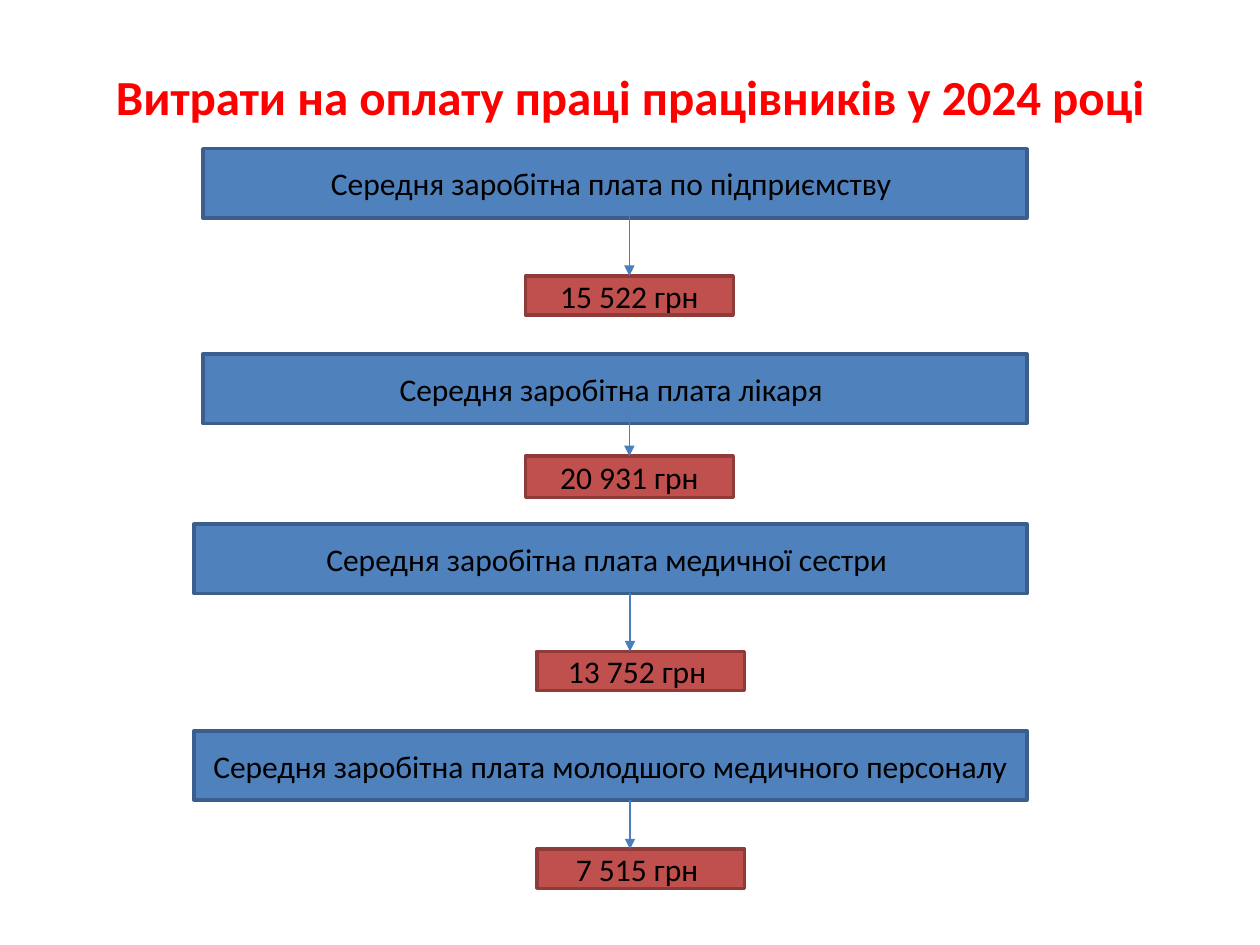
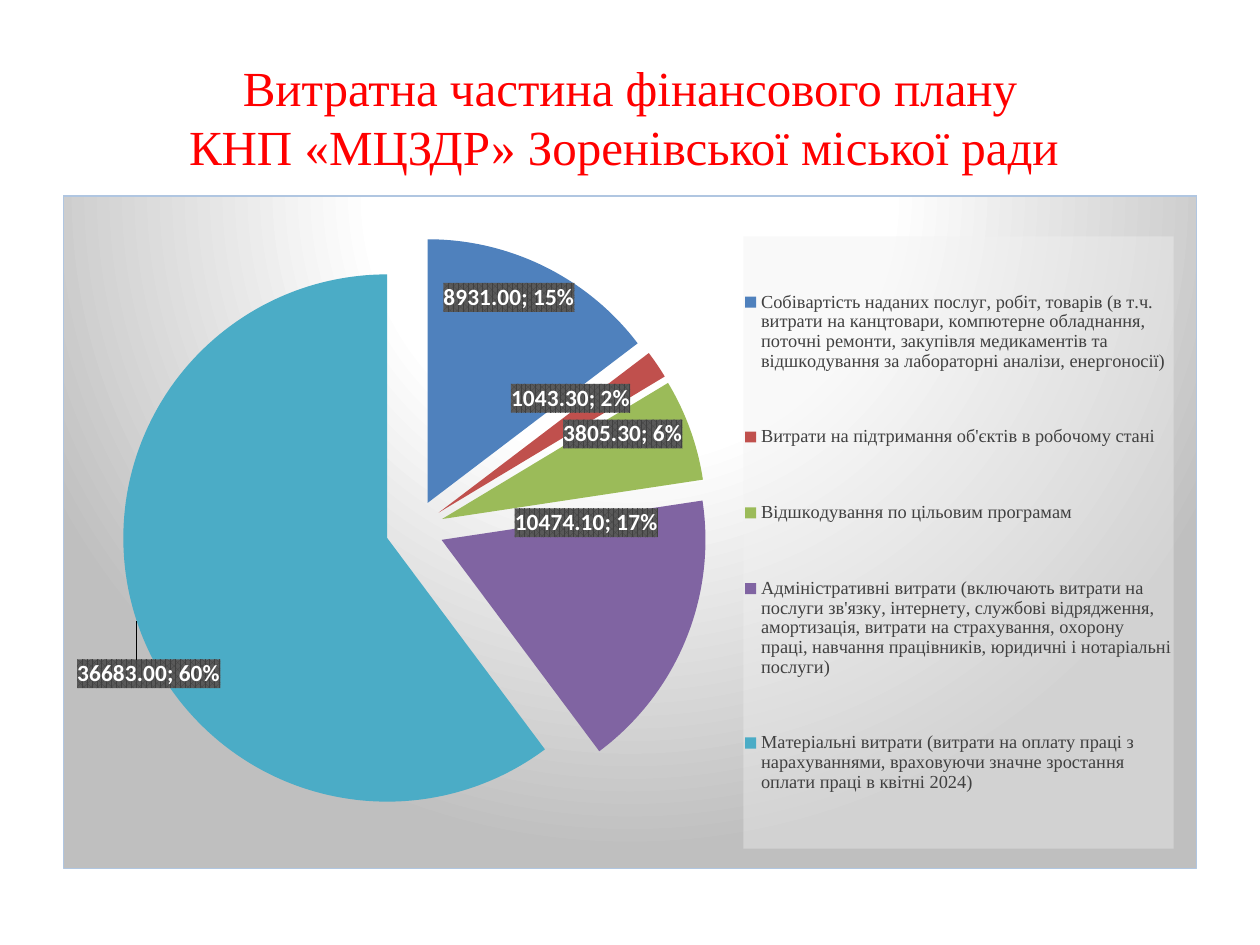
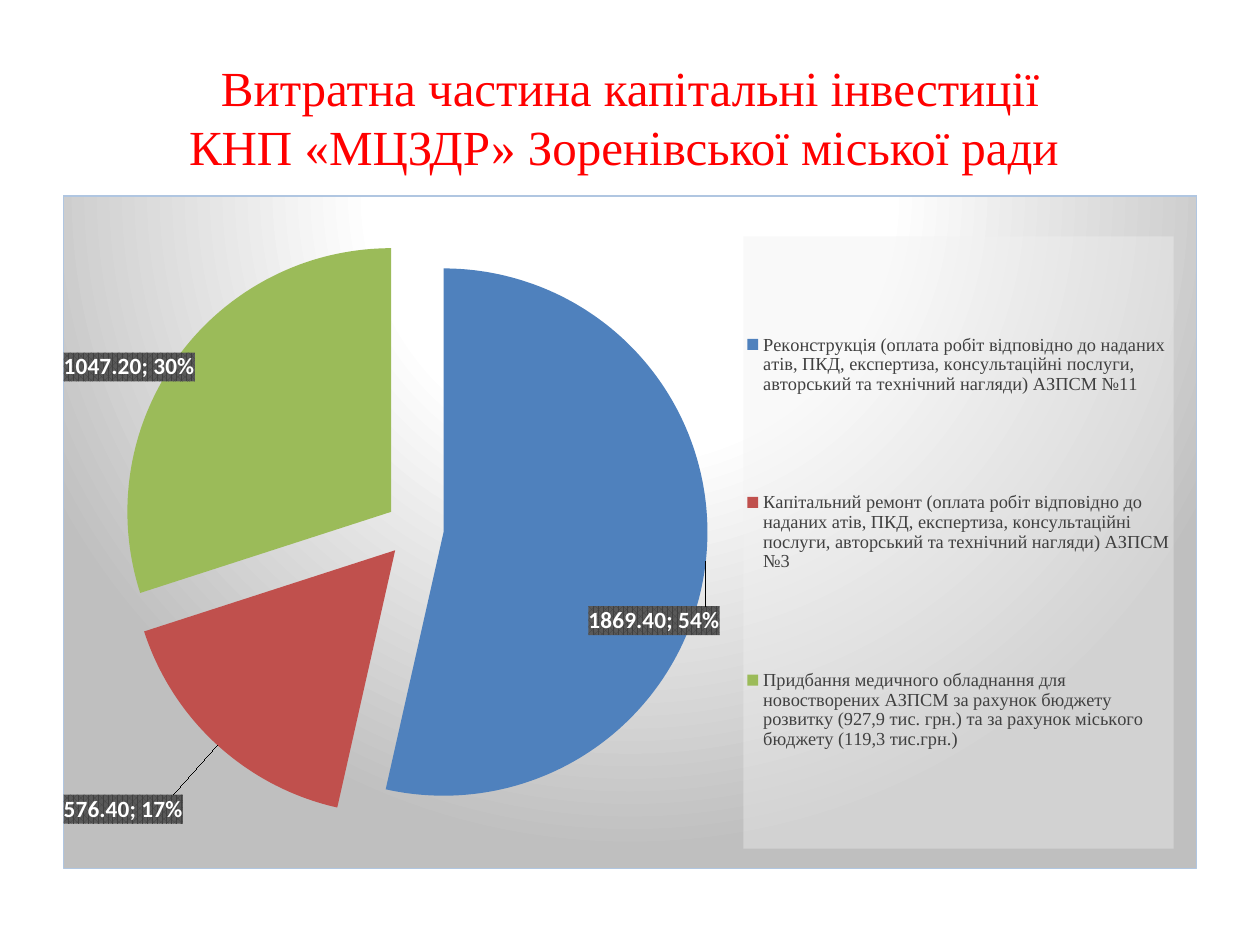
from pptx import Presentation
from pptx.chart.data import CategoryChartData
from pptx.dml.color import RGBColor
from pptx.enum.chart import XL_CHART_TYPE, XL_LEGEND_POSITION
from pptx.enum.shapes import MSO_CONNECTOR, MSO_SHAPE
from pptx.enum.text import MSO_ANCHOR, PP_ALIGN
from pptx.oxml import parse_xml
from pptx.oxml.ns import qn
from pptx.util import Inches, Pt

PROCESS = MSO_SHAPE.FLOWCHART_PROCESS
STRAIGHT = MSO_CONNECTOR.STRAIGHT
PIE = XL_CHART_TYPE.PIE
RIGHT = XL_LEGEND_POSITION.RIGHT
MIDDLE = MSO_ANCHOR.MIDDLE
CENTER = PP_ALIGN.CENTER

RED = RGBColor(0xFF, 0x00, 0x00)
BLACK = RGBColor(0x00, 0x00, 0x00)
GREY = RGBColor(0x40, 0x40, 0x40)
BLUE = RGBColor(0x4F, 0x81, 0xBD)
BLUE_EDGE = RGBColor(0x3A, 0x5F, 0x8C)
BRICK = RGBColor(0xC0, 0x50, 0x4D)
BRICK_EDGE = RGBColor(0x8E, 0x3B, 0x39)
ARROW = RGBColor(0x4B, 0x7E, 0xBC)
GREEN = RGBColor(0x9B, 0xBB, 0x59)
PURPLE = RGBColor(0x80, 0x64, 0xA2)
TEAL = RGBColor(0x4B, 0xAC, 0xC6)
SLICE_COLORS = [BLUE, BRICK, GREEN, PURPLE, TEAL]

SALARY_TITLE = "Витрати на оплату праці працівників у 2024 році"
ENTERPRISE = "КНП «МЦЗДР» Зоренівської міської ради "
SALARY_TITLE_FONT = {"name": "Calibri", "size": Pt(28), "bold": True}
CHART_TITLE_FONT = {"name": "Times New Roman", "size": Pt(28)}
BOX_FONT = {"name": "Calibri", "size": Pt(18)}
LEGEND_FONT = {"name": "Times New Roman", "size": Pt(10.5)}

# Group, its left and top; amount, its left, top and height; arrow start
SALARIES = [
    ("Середня заробітна плата по підприємству ", 1.61, 1.18,
     "15 522 грн", 4.17, 2.19, 0.31, 1.71),
    ("Середня заробітна плата лікаря ", 1.61, 2.81,
     "20 931 грн", 4.17, 3.62, 0.33, 3.2),
    ("Середня заробітна плата медичної сестри ", 1.54, 4.16,
     "13 752 грн ", 4.26, 5.17, 0.31, 4.71),
    ("Середня заробітна плата молодшого медичного персоналу", 1.54, 5.8,
     "7 515 грн ", 4.26, 6.74, 0.31, 6.35),
]
GROUP_RIGHT, GROUP_HEIGHT, AMOUNT_WIDTH, ARROW_X = 8.15, 0.55, 1.65, 5

# Category, value, shift of its label as a share of the chart
CHARTS = [
    ("Витратна частина фінансового плану", [
        ("Собівартість наданих послуг, робіт, товарів (в т.ч. витрати на "
         "канцтовари, компютерне обладнання, поточні ремонти, закупівля "
         "медикаментів та відшкодування за лабораторні аналізи, енергоносії)",
         8931, (0.02, -0.13)),
        ("Витрати на підтримання об'єктів в робочому стані ", 1043.3, (0.02, -0.06)),
        ("Відшкодування по цільовим програмам", 3805.3, (0.05, -0.06)),
        ("Адміністративні витрати (включають витрати на послуги зв'язку, "
         "інтернету, службові відрядження, амортизація, витрати на страхування, "
         "охорону праці, навчання працівників, юридичні і нотаріальні послуги)",
         10474.1, (0.02, -0.1)),
        ("Матеріальні витрати (витрати на оплату праці з нарахуваннями, "
         "враховуючи значне зростання оплати праці в квітні 2024)",
         36683, (-0.1, 0.14)),
    ]),
    ("Витратна частина капітальні інвестиції", [
        ("Реконструкція (оплата робіт відповідно до наданих атів, ПКД, експертиза, "
         "консультаційні послуги, авторський та технічний нагляди) АЗПСМ №11",
         1869.4, (0.07, 0.11)),
        ("Капітальний ремонт (оплата робіт відповідно до наданих атів, ПКД, "
         "експертиза, консультаційні послуги, авторський та технічний нагляди) "
         "АЗПСМ №3", 576.4, (-0.17, 0.24)),
        ("Придбання медичного обладнання для новостворених АЗПСМ за рахунок "
         "бюджету розвитку (927,9 тис. грн.) та за рахунок міського бюджету "
         "(119,3 тис.грн.)", 1047.2, (-0.14, -0.1)),
    ]),
]
EXPLOSION = 11
PLOT_AREA = (0.02, 0.06, 0.58, 0.87)
LEGEND_AREA = (0.6, 0.06, 0.38, 0.91)

NAMESPACES = (
    'xmlns:c="http://schemas.openxmlformats.org/drawingml/2006/chart" '
    'xmlns:a="http://schemas.openxmlformats.org/drawingml/2006/main"'
)
CHART_FILL = """
<a:gradFill><a:gsLst>
  <a:gs pos="0"><a:srgbClr val="FFFFFF"/></a:gs>
  <a:gs pos="39000"><a:srgbClr val="FFFFFF"/></a:gs>
  <a:gs pos="100000"><a:srgbClr val="BFBFBF"/></a:gs>
</a:gsLst><a:path path="circle">
  <a:fillToRect l="50000" t="-80000" r="50000" b="180000"/>
</a:path></a:gradFill>
<a:ln w="9525"><a:solidFill><a:srgbClr val="B0C6E1"/></a:solidFill></a:ln>"""
LEGEND_FILL = """
<a:solidFill><a:srgbClr val="F2F2F2"><a:alpha val="39000"/></a:srgbClr></a:solidFill>"""
LABEL_FORMAT = """
<c:spPr><a:pattFill prst="pct75">
  <a:fgClr><a:srgbClr val="404040"/></a:fgClr>
  <a:bgClr><a:srgbClr val="595959"/></a:bgClr>
</a:pattFill><a:ln><a:noFill/></a:ln></c:spPr>
<c:txPr><a:bodyPr/><a:p><a:pPr><a:defRPr sz="1330" b="1">
  <a:solidFill><a:srgbClr val="FFFFFF"/></a:solidFill><a:latin typeface="Calibri"/>
</a:defRPr></a:pPr><a:endParaRPr lang="uk-UA"/></a:p></c:txPr>
<c:dLblPos val="ctr"/><c:showLegendKey val="0"/><c:showVal val="1"/>
<c:showCatName val="0"/><c:showSerName val="0"/><c:showPercent val="1"/>
<c:showBubbleSize val="0"/><c:separator>; </c:separator>"""


def element(tag, content="", attributes=""):
    return parse_xml(f"<{tag} {NAMESPACES} {attributes}>{content}</{tag}>")


def set_font(font, values, color):
    for name, value in values.items():
        setattr(font, name, value)
    font.color.rgb = color


def write(shape, text, values, color):
    frame = shape.text_frame
    frame.word_wrap = True
    frame.vertical_anchor = MIDDLE
    para = frame.paragraphs[0]
    para.text = text
    para.alignment = CENTER
    for span in para.runs:
        set_font(span.font, values, color)


def add_title(page, text, height, values):
    title = page.shapes.add_textbox(Inches(0.5), Inches(0.3), Inches(9), Inches(height))
    write(title, text, values, RED)


def add_box(page, text, left, top, width, height, fill, edge):
    box = page.shapes.add_shape(
        PROCESS, Inches(left), Inches(top), Inches(width), Inches(height))
    box.shadow.inherit = False
    box.fill.solid()
    box.fill.fore_color.rgb = fill
    box.line.color.rgb = edge
    box.line.width = Pt(2)
    write(box, text, BOX_FONT, BLACK)
    return box


def add_arrow(page, start, end, target):
    # Join only where the arrow meets the middle of the amount's top side
    middle = target.left + target.width // 2
    joined = abs(middle - Inches(ARROW_X)) < Inches(0.02)
    x = middle if joined else Inches(ARROW_X)
    arrow = page.shapes.add_connector(STRAIGHT, x, Inches(start), x, Inches(end))
    if joined:
        arrow.end_connect(target, 0)
    arrow.line.color.rgb = ARROW
    arrow.line.width = Pt(0.75)
    line = arrow.line._get_or_add_ln()
    line.append(element("a:tailEnd", attributes='type="triangle"'))
    line.getparent().append(element("a:effectLst"))


def manual_layout(area, inner=False):
    target = '<c:layoutTarget val="inner"/>' if inner else ""
    modes = '<c:xMode val="edge"/><c:yMode val="edge"/>'
    sizes = "".join(f'<c:{key} val="{value}"/>' for key, value in zip("xywh", area))
    return element("c:layout", f"<c:manualLayout>{target}{modes}{sizes}</c:manualLayout>")


def replace_layout(parent, position, layout):
    for old in parent.findall(qn("c:layout")):
        parent.remove(old)
    parent.insert(position, layout)


def pie_labels(shifts):
    labels = "".join(
        f'<c:dLbl><c:idx val="{index}"/><c:layout><c:manualLayout>'
        f'<c:x val="{x}"/><c:y val="{y}"/></c:manualLayout></c:layout>'
        f"{LABEL_FORMAT}</c:dLbl>"
        for index, (x, y) in enumerate(shifts))
    return element("c:dLbls", labels + LABEL_FORMAT + '<c:showLeaderLines val="1"/>')


def add_pie(page, slices):
    names, values, shifts = zip(*slices)
    data = CategoryChartData(number_format="0.00")
    data.categories = names
    data.add_series("Series 1", values)
    chart = page.shapes.add_chart(
        PIE, Inches(0.5), Inches(1.55), Inches(9), Inches(5.35), data).chart
    chart.has_title = False
    set_font(chart.font, {"name": "Calibri", "size": Pt(10)}, BLACK)
    chart.plots[0].vary_by_categories = True

    # Legend
    chart.has_legend = True
    legend = chart.legend
    legend.position = RIGHT
    legend.include_in_layout = False
    set_font(legend.font, LEGEND_FONT, GREY)

    # Slices
    series = chart.plots[0].series[0]
    for index in range(len(slices)):
        fill = series.points[index].format.fill
        fill.solid()
        fill.fore_color.rgb = SLICE_COLORS[index]

    # Explosion, labels, layouts and backgrounds
    root = chart.element
    series_node = root.find(".//" + qn("c:ser"))
    for old in series_node.findall(qn("c:explosion")):
        series_node.remove(old)
    series_node.find(qn("c:dPt")).addprevious(
        element("c:explosion", attributes=f'val="{EXPLOSION}"'))
    series_node.find(qn("c:cat")).addprevious(pie_labels(shifts))
    replace_layout(root.find(".//" + qn("c:plotArea")), 0,
                   manual_layout(PLOT_AREA, inner=True))
    legend_node = root.find(".//" + qn("c:legend"))
    replace_layout(legend_node, 1, manual_layout(LEGEND_AREA))
    for parent, fill in ((legend_node, LEGEND_FILL), (root, CHART_FILL)):
        parent.find(qn("c:txPr")).addprevious(element("c:spPr", fill))


def main():
    deck = Presentation()
    deck.slide_width, deck.slide_height = Inches(10), Inches(7.5)
    blank = deck.slide_layouts[6]

    # Salaries
    page = deck.slides.add_slide(blank)
    add_title(page, SALARY_TITLE, 0.93, SALARY_TITLE_FONT)
    for group, left, top, amount, amount_left, amount_top, height, start in SALARIES:
        add_box(page, group, left, top, GROUP_RIGHT - left, GROUP_HEIGHT, BLUE, BLUE_EDGE)
        amount_box = add_box(page, amount, amount_left, amount_top,
                             AMOUNT_WIDTH, height, BRICK, BRICK_EDGE)
        add_arrow(page, start, amount_top, amount_box)

    # Expense charts
    for subject, slices in CHARTS:
        page = deck.slides.add_slide(blank)
        add_title(page, f"{subject}\n{ENTERPRISE}", 1.25, CHART_TITLE_FONT)
        add_pie(page, slices)

    deck.save("out.pptx")


if __name__ == "__main__":
    main()
